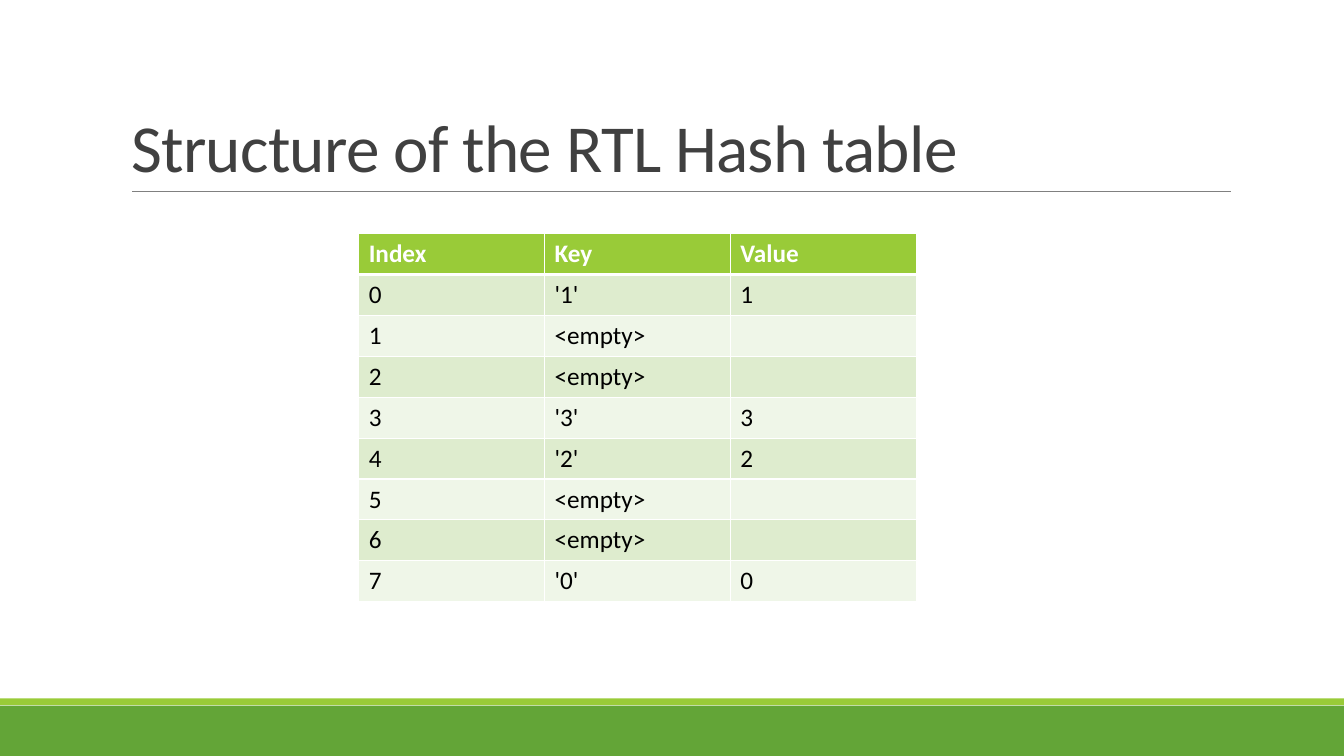
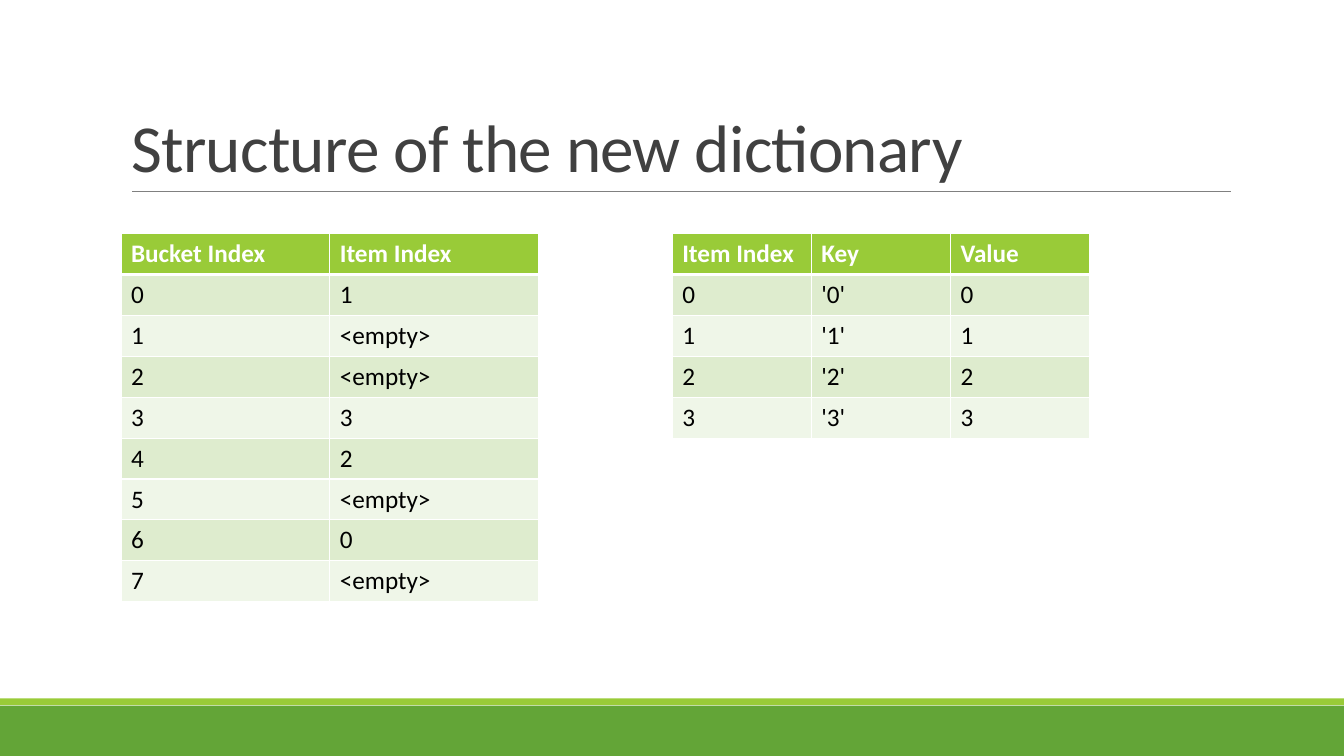
"""Build two slides that compare hash table layouts."""
from lxml.etree import SubElement
from pptx import Presentation
from pptx.dml.color import RGBColor
from pptx.enum.shapes import MSO_CONNECTOR, MSO_SHAPE
from pptx.enum.text import MSO_ANCHOR, MSO_AUTO_SIZE, PP_ALIGN
from pptx.oxml.ns import qn
from pptx.util import Cm, Pt

FONT = "Calibri"
WHITE, BLACK, GREY, RULE = "FFFFFF", "000000", "404040", "808080"
GREEN, LIME = "63A537", "99CB38"
TINTS = ["EFF6E8", "DEECCE"]
WIDE, HIGH = 33.87, 19.05
TOP, ROW = 5.89, 1.03
BANDS = [(17.78, 1.27, GREEN), (17.6, 0.17, LIME)]

SLIDES = [
    ("Structure of the RTL Hash table", [
        (9.04, 14.05, [
            ("Index", "Key", "Value"),
            ("0", "'1'", "1"),
            ("1", "<empty>", ""),
            ("2", "<empty>", ""),
            ("3", "'3'", "3"),
            ("4", "'2'", "2"),
            ("5", "<empty>", ""),
            ("6", "<empty>", ""),
            ("7", "'0'", "0"),
        ]),
    ]),
    ("Structure of the new dictionary", [
        (3.05, 10.52, [
            ("Bucket Index", "Item Index"),
            ("0", "1"),
            ("1", "<empty>"),
            ("2", "<empty>"),
            ("3", "3"),
            ("4", "2"),
            ("5", "<empty>"),
            ("6", "0"),
            ("7", "<empty>"),
        ]),
        (16.94, 10.52, [
            ("Item Index", "Key", "Value"),
            ("0", "'0'", "0"),
            ("1", "'1'", "1"),
            ("2", "'2'", "2"),
            ("3", "'3'", "3"),
        ]),
    ]),
]


def color(code):
    return RGBColor.from_string(code)


def style(para, size, code, bold=False):
    for run in para.runs:
        run.font.name = FONT
        run.font.size = Pt(size)
        run.font.bold = bold
        run.font.color.rgb = color(code)


deck = Presentation()
deck.slide_width, deck.slide_height = Cm(WIDE), Cm(HIGH)

for name, tables in SLIDES:
    slide = deck.slides.add_slide(deck.slide_layouts[5])
    shapes = slide.shapes

    for top, height, code in BANDS:
        band = shapes.add_shape(MSO_SHAPE.RECTANGLE, 0, Cm(top), Cm(WIDE), Cm(height))
        band.shadow.inherit = False
        band.fill.solid()
        band.fill.fore_color.rgb = color(code)
        band.line.fill.background()

    rule = shapes.add_connector(MSO_CONNECTOR.STRAIGHT, Cm(3.33), Cm(4.83), Cm(31.01), Cm(4.83))
    rule.line.color.rgb = color(RULE)
    rule.line.width = Pt(0.5)
    SubElement(rule._element.spPr, qn("a:effectLst"))

    title = shapes.title
    title.left, title.top = Cm(3.05), Cm(0.79)
    title.width, title.height = Cm(27.94), Cm(4.04)
    frame = title.text_frame
    frame.text = name
    frame.auto_size = MSO_AUTO_SIZE.NONE
    frame.vertical_anchor = MSO_ANCHOR.BOTTOM
    para = frame.paragraphs[0]
    para.alignment = PP_ALIGN.LEFT
    para.line_spacing = 0.85
    style(para, 48, GREY)
    para.runs[0].font._element.set("spc", "-50")

    for left, width, rows in tables:
        count = len(rows[0])
        grid = shapes.add_table(len(rows), count, Cm(left), Cm(TOP),
                                Cm(width), Cm(ROW * len(rows))).table
        for r, row in enumerate(rows):
            head = r == 0
            for c, text in enumerate(row):
                cell = grid.cell(r, c)
                props = cell._tc.get_or_add_tcPr()
                for side in "LRTB":
                    thick = (head and side == "B") or (r == 1 and side == "T")
                    edge = SubElement(props, qn("a:ln" + side), w=str(Pt(3 if thick else 1)))
                    fill = SubElement(edge, qn("a:solidFill"))
                    SubElement(fill, qn("a:srgbClr"), val=WHITE)
                cell.fill.solid()
                cell.fill.fore_color.rgb = color(LIME if head else TINTS[r % 2])
                cell.text_frame.text = text
                style(cell.text_frame.paragraphs[0], 18, WHITE if head else BLACK, head)

deck.save("out.pptx")
